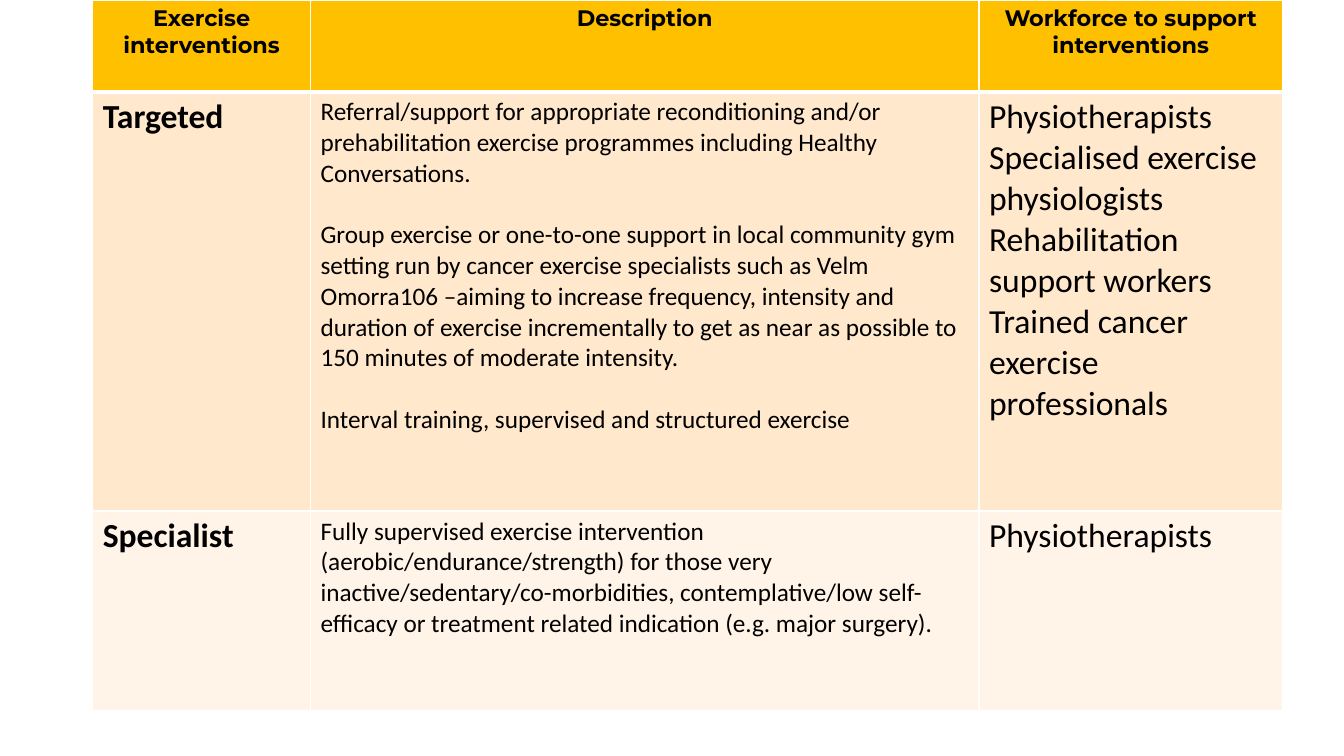
"""Build a slide with a table of exercise interventions and their workforce."""
from lxml.etree import SubElement
from pptx import Presentation
from pptx.dml.color import RGBColor
from pptx.enum.text import PP_ALIGN
from pptx.oxml.ns import qn
from pptx.util import Inches, Pt

COLOURS = {"header": "FFC000", "targeted": "FFE8CC", "specialist": "FFF4E7",
           "rule": "FFFFFF", "text": "000000"}
COLUMN_WIDTHS = [2.16, 6.63, 3.01]
ROW_HEIGHTS = [0.91, 4.16, 1.98]
HEADING = {"name": "Montserrat", "size": Pt(16), "bold": True}
LEVEL = {"name": "Calibri", "size": Pt(24), "bold": True}
DESCRIPTION = {"name": "Calibri", "size": Pt(18), "bold": False}
WORKFORCE = {"name": "Calibri", "size": Pt(24), "bold": False}
BODY = [LEVEL, DESCRIPTION, WORKFORCE]

interventions = [
    ("header", [HEADING] * 3, [
        ["Exercise interventions"],
        ["Description"],
        ["Workforce to support interventions"],
    ]),
    ("targeted", BODY, [
        ["Targeted"],
        ["Referral/support for appropriate reconditioning and/or prehabilitation "
         "exercise programmes including Healthy Conversations.",
         "Group exercise or one-to-one support in local community gym setting run by "
         "cancer exercise specialists such as Velm Omorra106 –aiming to increase "
         "frequency, intensity and duration of exercise incrementally to get as near "
         "as possible to 150 minutes of moderate intensity.",
         "Interval training, supervised and structured exercise"],
        ["Physiotherapists", "Specialised exercise physiologists",
         "Rehabilitation support workers", "Trained cancer exercise professionals"],
    ]),
    ("specialist", BODY, [
        ["Specialist"],
        ["Fully supervised exercise intervention (aerobic/endurance/strength) for "
         "those very inactive/sedentary/co-morbidities, contemplative/low "
         "self-efficacy or treatment related indication (e.g. major surgery)."],
        ["Physiotherapists"],
    ]),
]


def draw_borders(cell, row_index):
    for side in "LRTB":
        width = 3 if (row_index, side) in [(0, "B"), (1, "T")] else 1
        border = SubElement(cell._tc.get_or_add_tcPr(), qn(f"a:ln{side}"), w=str(Pt(width)))
        SubElement(SubElement(border, qn("a:solidFill")), qn("a:srgbClr"), val=COLOURS["rule"])


prs = Presentation()
prs.slide_width, prs.slide_height = Inches(13.33), Inches(7.5)
slide = prs.slides.add_slide(prs.slide_layouts[6])
plan = slide.shapes.add_table(
    len(ROW_HEIGHTS), len(COLUMN_WIDTHS), Inches(0.92), 0,
    Inches(sum(COLUMN_WIDTHS)), Inches(sum(ROW_HEIGHTS))).table

for column, width in zip(plan.columns, COLUMN_WIDTHS):
    column.width = Inches(width)
for row, height in zip(plan.rows, ROW_HEIGHTS):
    row.height = Inches(height)

for row_index, (level, formats, contents) in enumerate(interventions):
    for column_index, (font_format, lines) in enumerate(zip(formats, contents)):
        cell = plan.cell(row_index, column_index)
        draw_borders(cell, row_index)
        cell.fill.solid()
        cell.fill.fore_color.rgb = RGBColor.from_string(COLOURS[level])
        cell.text = "\n".join(lines)
        for line_index, paragraph in enumerate(cell.text_frame.paragraphs):
            paragraph.alignment = PP_ALIGN.CENTER if level == "header" else PP_ALIGN.LEFT
            if font_format is DESCRIPTION and line_index:
                paragraph.space_before = Pt(22)
            font = paragraph.runs[0].font
            for attribute, setting in font_format.items():
                setattr(font, attribute, setting)
            font.color.rgb = RGBColor.from_string(COLOURS["text"])

prs.save("out.pptx")
